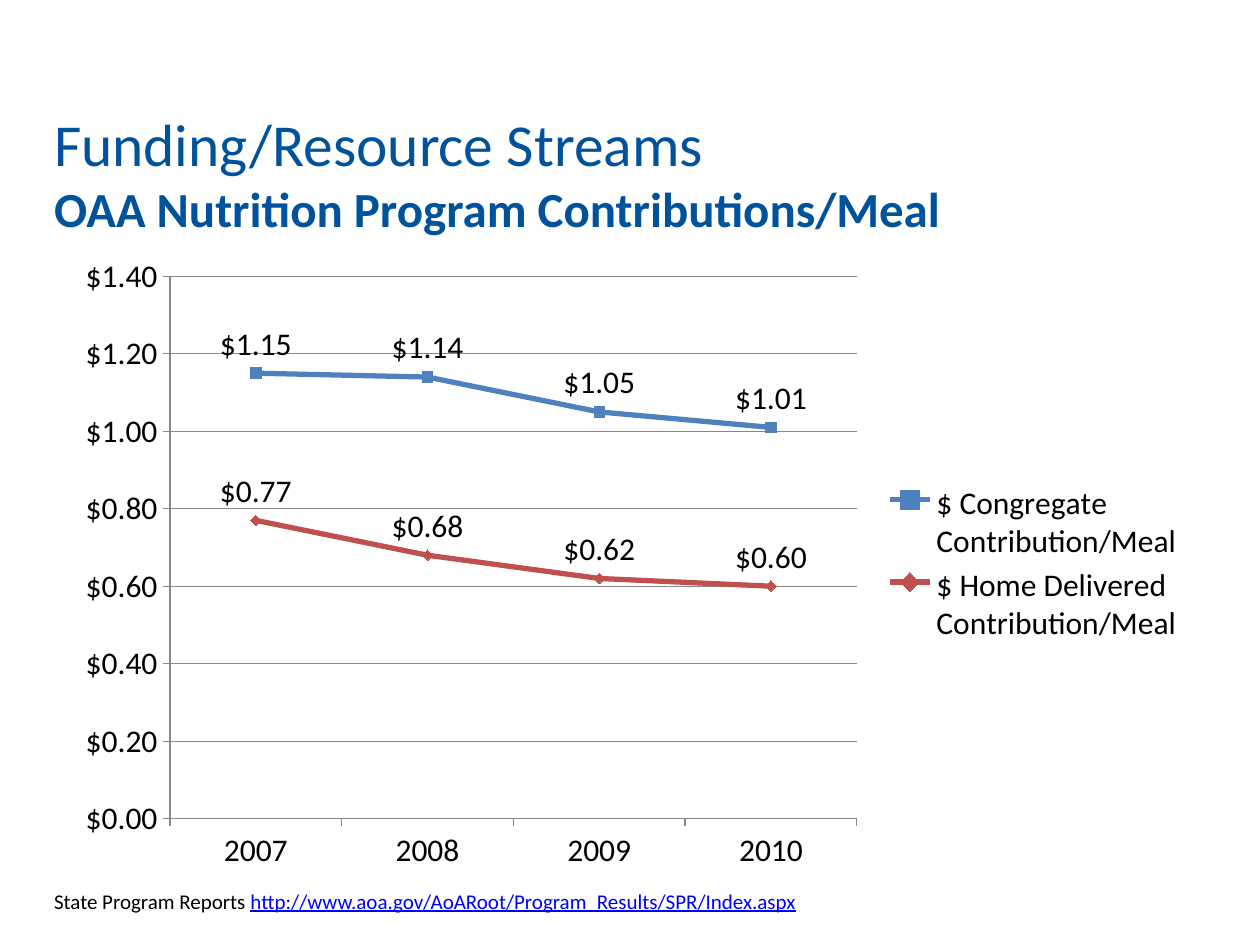
from typing import NamedTuple

from pptx import Presentation
from pptx.chart.data import CategoryChartData
from pptx.dml.color import RGBColor
from pptx.enum.chart import (XL_CHART_TYPE, XL_LABEL_POSITION, XL_LEGEND_POSITION,
                             XL_MARKER_STYLE, XL_TICK_MARK)
from pptx.enum.text import MSO_ANCHOR
from pptx.util import Cm, Pt

FONT = "Calibri"
COLORS = {
    "heading": "00529B",
    "text": "000000",
    "link": "0000FF",
    "axis": "878787",
    "congregate": "4F81BD",
    "home": "C0504D",
}
YEARS = ("2007", "2008", "2009", "2010")
DOLLARS = '"$"#,##0.00'


class Contribution(NamedTuple):
    name: str
    values: tuple
    color: str
    marker: XL_MARKER_STYLE


CONTRIBUTIONS = (
    Contribution("$ Congregate Contribution/Meal", (1.15, 1.14, 1.05, 1.01),
                 "congregate", XL_MARKER_STYLE.SQUARE),
    Contribution("$ Home Delivered Contribution/Meal", (0.77, 0.68, 0.62, 0.60),
                 "home", XL_MARKER_STYLE.DIAMOND),
)


def rgb(name: str) -> RGBColor:
    return RGBColor.from_string(COLORS[name])


def style_font(font, size: float, color: str, bold: bool = False) -> None:
    font.name = FONT
    font.size = Pt(size)
    font.bold = bold
    font.color.rgb = rgb(color)


def add_text_frame(slide, left, top, width, height):
    frame = slide.shapes.add_textbox(left, top, width, height).text_frame
    frame.word_wrap = True
    return frame


def add_heading(slide) -> None:
    frame = add_text_frame(slide, Cm(0.84), Cm(2.62), Cm(22.86), Cm(1.7))
    frame.vertical_anchor = MSO_ANCHOR.MIDDLE
    heading = frame.paragraphs[0]
    heading.text = "Funding/Resource Streams\vOAA Nutrition Program Contributions/Meal"
    topic, measure = heading.runs
    style_font(topic.font, 34, "heading")
    style_font(measure.font, 28, "heading", bold=True)


def style_series(series, contribution: Contribution) -> None:
    color = rgb(contribution.color)
    series.smooth = False
    series.format.line.width = Pt(3)
    series.format.line.color.rgb = color
    marker = series.marker
    marker.style = contribution.marker
    marker.size = 6
    marker.format.fill.solid()
    marker.format.fill.fore_color.rgb = color
    marker.format.line.color.rgb = color
    labels = series.data_labels
    labels.show_value = True
    labels.position = XL_LABEL_POSITION.ABOVE
    labels.number_format = DOLLARS
    labels.number_format_is_linked = False
    style_font(labels.font, 18, "text")


def add_contribution_chart(slide) -> None:
    data = CategoryChartData(number_format=DOLLARS)
    data.categories = YEARS
    for contribution in CONTRIBUTIONS:
        data.add_series(contribution.name, contribution.values)
    chart = slide.shapes.add_chart(XL_CHART_TYPE.LINE_MARKERS, Cm(1.27), Cm(4.93),
                                   Cm(22.86), Cm(12.85), data).chart
    style_font(chart.font, 18, "text")
    chart.has_title = False
    chart.has_legend = True
    chart.legend.position = XL_LEGEND_POSITION.RIGHT
    chart.legend.include_in_layout = False
    chart.plots[0].vary_by_categories = False

    for axis in (chart.category_axis, chart.value_axis):
        axis.major_tick_mark = XL_TICK_MARK.OUTSIDE
        axis.minor_tick_mark = XL_TICK_MARK.NONE
        axis.format.line.color.rgb = rgb("axis")
    amounts = chart.value_axis
    amounts.minimum_scale, amounts.maximum_scale, amounts.major_unit = 0, 1.4, 0.2
    amounts.tick_labels.number_format = DOLLARS
    amounts.tick_labels.number_format_is_linked = False
    amounts.has_major_gridlines = True
    amounts.major_gridlines.format.line.color.rgb = rgb("axis")

    for series, contribution in zip(chart.plots[0].series, CONTRIBUTIONS):
        style_series(series, contribution)


def add_citation(slide) -> None:
    frame = add_text_frame(slide, Cm(0.84), Cm(17.78), Cm(21.16), Cm(1.27))
    citation = frame.paragraphs[0]
    citation.text = "State Program Reports "
    address = citation.add_run()
    address.text = "http://www.aoa.gov/AoARoot/Program_Results/SPR/Index.aspx"
    style_font(citation.runs[0].font, 12, "text")
    style_font(address.font, 12, "link")
    address.font.underline = True


def main() -> None:
    presentation = Presentation()
    presentation.slide_width = Cm(25.4)
    presentation.slide_height = Cm(19.05)
    slide = presentation.slides.add_slide(presentation.slide_layouts[6])
    add_heading(slide)
    add_contribution_chart(slide)
    add_citation(slide)
    presentation.save("out.pptx")


if __name__ == "__main__":
    main()
